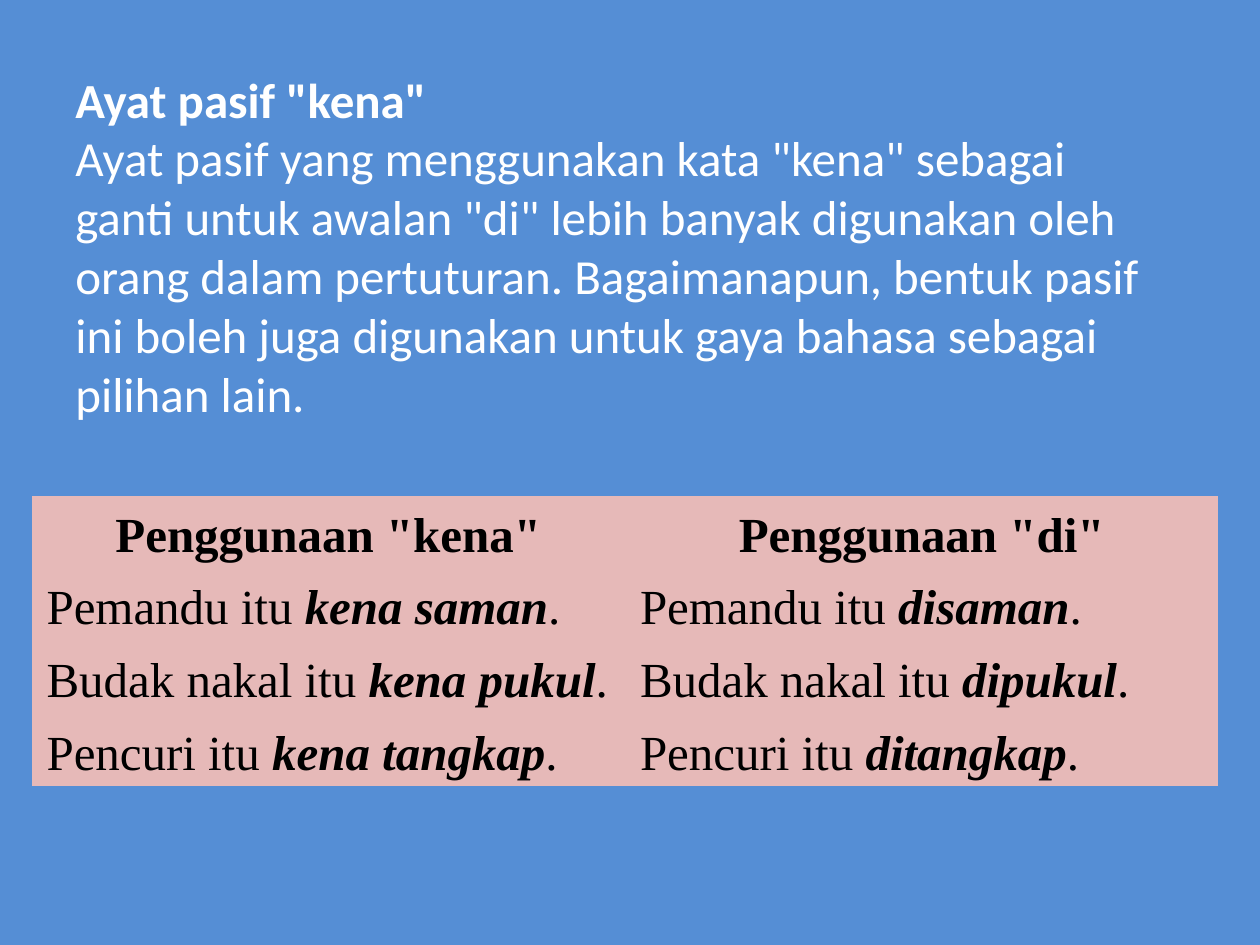
from dataclasses import dataclass

from pptx import Presentation
from pptx.dml.color import RGBColor
from pptx.enum.text import MSO_ANCHOR, MSO_AUTO_SIZE, PP_ALIGN
from pptx.util import Inches, Pt

COLORS = {"background": "558ED5", "cell": "E6B9B8", "intro": "FFFFFF", "table": "000000"}
SLIDE_WIDTH, SLIDE_HEIGHT = Inches(10), Inches(7.5)
FONT_SIZE = Pt(28)
HEADER_HEIGHT, ROW_HEIGHT = Inches(0.56), Inches(0.58)


@dataclass(frozen=True)
class Example:
    """One sentence, with its passive form in the kena and di columns."""
    subject: str
    kena: str
    di: str


HEADING = 'Ayat pasif "kena"'
EXPLANATION = (
    'Ayat pasif yang menggunakan kata "kena" sebagai ganti untuk awalan "di" '
    "lebih banyak digunakan oleh orang dalam pertuturan. Bagaimanapun, bentuk "
    "pasif ini boleh juga digunakan untuk gaya bahasa sebagai pilihan lain."
)
HEADERS = ('Penggunaan "kena"', 'Penggunaan "di"')
EXAMPLES = (
    Example("Pemandu itu", "kena saman", "disaman"),
    Example("Budak nakal itu", "kena pukul", "dipukul"),
    Example("Pencuri itu", "kena tangkap", "ditangkap"),
)


def color(name: str) -> RGBColor:
    return RGBColor.from_string(COLORS[name])


def style(paragraph, font_name: str, color_name: str, bold: bool | None = None) -> None:
    font = paragraph.font
    font.name, font.size, font.bold = font_name, FONT_SIZE, bold
    font.color.rgb = color(color_name)


def add_intro(slide) -> None:
    box = slide.shapes.add_textbox(
        int(SLIDE_WIDTH * 0.05), Inches(0.5), Inches(8.83), Inches(2.93))
    frame = box.text_frame
    frame.word_wrap = True
    frame.auto_size = MSO_AUTO_SIZE.SHAPE_TO_FIT_TEXT
    frame.text = f"{HEADING}\n{EXPLANATION}"
    for paragraph, bold in zip(frame.paragraphs, (True, False)):
        style(paragraph, "Calibri", "intro", bold)


def prepare_cell(cell, side_margin: float, edge_margin: float, bold: bool | None = None):
    """Format a cell and return its paragraph."""
    cell.fill.solid()
    cell.fill.fore_color.rgb = color("cell")
    cell.vertical_anchor = MSO_ANCHOR.MIDDLE
    cell.margin_left = cell.margin_right = Inches(side_margin)
    cell.margin_top = cell.margin_bottom = Inches(edge_margin)
    paragraph = cell.text_frame.paragraphs[0]
    paragraph.line_spacing = 1.15
    style(paragraph, "Times New Roman", "table", bold)
    return paragraph


def fill_header(cell, text: str) -> None:
    paragraph = prepare_cell(cell, 0.01, 0.01, bold=True)
    paragraph.alignment = PP_ALIGN.CENTER
    paragraph.add_run().text = text


def fill_example(cell, subject: str, verb: str) -> None:
    paragraph = prepare_cell(cell, 0.12, 0.02)
    for text, emphasized in ((f"{subject} ", False), (verb, True), (".", False)):
        run = paragraph.add_run()
        run.text = text
        run.font.bold = run.font.italic = emphasized


def add_comparison(slide) -> None:
    table = slide.shapes.add_table(
        len(EXAMPLES) + 1, len(HEADERS), int(SLIDE_WIDTH * 0.025), Inches(3.94),
        Inches(9.42), HEADER_HEIGHT + len(EXAMPLES) * ROW_HEIGHT).table
    table.horz_banding = False
    table.first_row = False
    # Remove the default style so that no borders show
    style_id = table._tbl.tblPr.find("{*}tableStyleId")
    style_id.text = "{2D5ABB26-0587-4C30-8999-92F81FD0307C}"
    for row in table.rows:
        row.height = ROW_HEIGHT
    table.rows[0].height = HEADER_HEIGHT

    for column, header in enumerate(HEADERS):
        fill_header(table.cell(0, column), header)
    for row, example in enumerate(EXAMPLES, start=1):
        for column, verb in enumerate((example.kena, example.di)):
            fill_example(table.cell(row, column), example.subject, verb)


def main() -> None:
    presentation = Presentation()
    presentation.slide_width, presentation.slide_height = SLIDE_WIDTH, SLIDE_HEIGHT
    slide = presentation.slides.add_slide(presentation.slide_layouts[6])
    slide.background.fill.solid()
    slide.background.fill.fore_color.rgb = color("background")
    add_intro(slide)
    add_comparison(slide)
    presentation.save("out.pptx")


if __name__ == "__main__":
    main()
